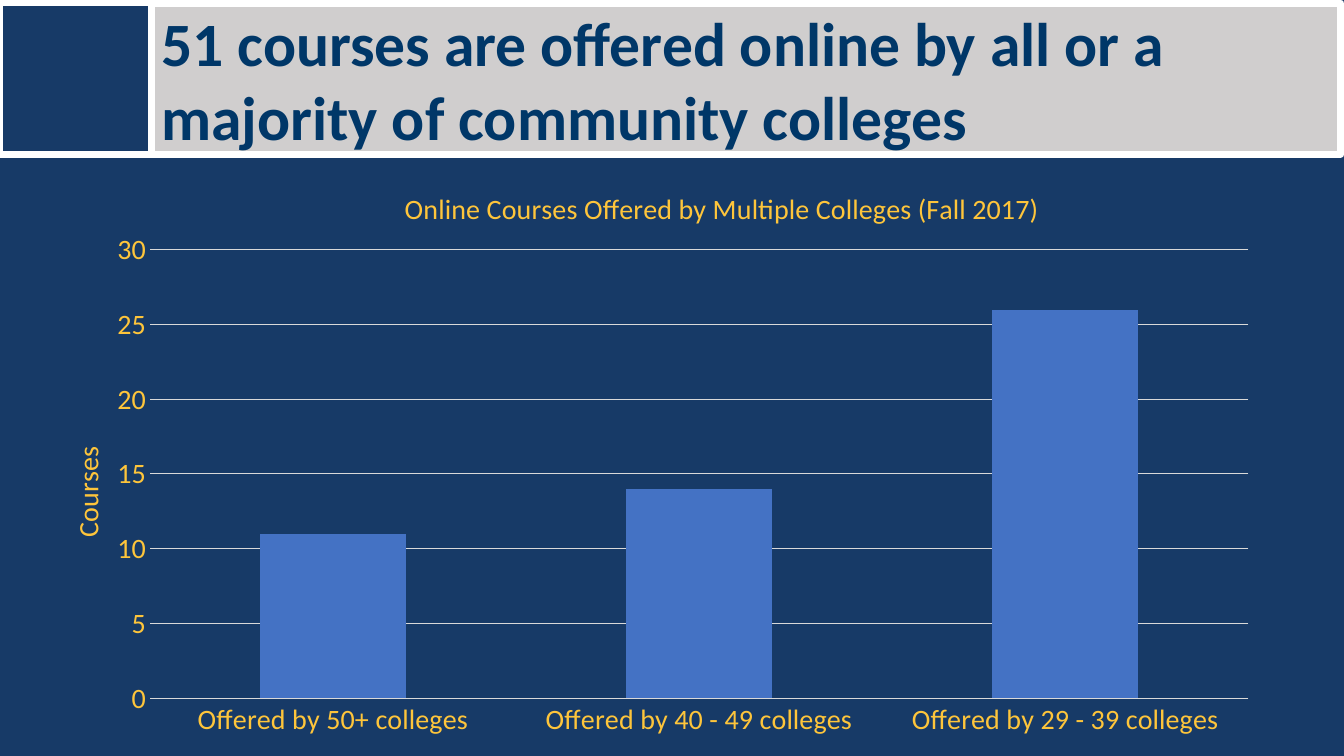
import pptx
import pptx.chart.data
import pptx.dml.color
import pptx.enum.chart
import pptx.enum.shapes
import pptx.enum.text
import pptx.oxml
import pptx.oxml.ns
import pptx.util
from pptx.util import Inches

RGBColor = pptx.dml.color.RGBColor
NAVY = RGBColor(0x17, 0x3A, 0x67)
TITLE_BLUE = RGBColor(0x00, 0x37, 0x68)
TITLE_GREY = RGBColor(0xD0, 0xCE, 0xCE)
WHITE = RGBColor(0xFF, 0xFF, 0xFF)
GOLD = RGBColor(0xFE, 0xC5, 0x3B)
GRID_GREY = RGBColor(0xD9, 0xD9, 0xD9)
BAR_BLUE = RGBColor(0x44, 0x72, 0xC4)
FONT = "Calibri"
HEADER_TOP = Inches(0.03)
HEADER_HEIGHT = Inches(1.5)

COURSES_BY_REACH = {
    "Offered by 50+ colleges": 11,
    "Offered by 40 - 49 colleges": 14,
    "Offered by 29 - 39 colleges": 26,
}


def style_font(font, size, color, bold=False):
    font.name = FONT
    font.size = pptx.util.Pt(size)
    font.bold = bold
    font.color.rgb = color


def style_line(line, color, width):
    line.color.rgb = color
    line.width = pptx.util.Pt(width)


def add_heading(slide, text):
    heading = slide.shapes.title
    heading.left, heading.top = Inches(1.5), HEADER_TOP
    heading.width, heading.height = Inches(11.8), HEADER_HEIGHT
    heading.fill.solid()
    heading.fill.fore_color.rgb = TITLE_GREY
    style_line(heading.line, WHITE, 5)
    frame = heading.text_frame
    frame.word_wrap = True
    frame.auto_size = pptx.enum.text.MSO_AUTO_SIZE.NONE
    frame.vertical_anchor = pptx.enum.text.MSO_ANCHOR.MIDDLE
    paragraph = frame.paragraphs[0]
    paragraph.alignment = pptx.enum.text.PP_ALIGN.LEFT
    run = paragraph.add_run()
    run.text = text
    style_font(run.font, 44, TITLE_BLUE, bold=True)


def add_corner_square(slide):
    square = slide.shapes.add_shape(
        pptx.enum.shapes.MSO_SHAPE.RECTANGLE,
        Inches(0), HEADER_TOP, Inches(1.5), HEADER_HEIGHT)
    square.shadow.inherit = False
    square.fill.background()
    style_line(square.line, WHITE, 5)


def place(element, **fractions):
    """Fix a chart part at fractions of the chart's width and height."""
    qn = pptx.oxml.ns.qn
    for automatic in element.findall(qn("c:layout")):
        element.remove(automatic)
    target = '<c:layoutTarget val="inner"/>' if "w" in fractions else ""
    modes = '<c:xMode val="edge"/><c:yMode val="edge"/>'
    sizes = "".join(f'<c:{key} val="{value}"/>' for key, value in fractions.items())
    layout = pptx.oxml.parse_xml(
        f'<c:layout {pptx.oxml.ns.nsdecls("c")}><c:manualLayout>'
        f"{target}{modes}{sizes}</c:manualLayout></c:layout>")
    text = element.find(qn("c:tx"))
    if text is None:
        element.insert(0, layout)
    else:
        text.addnext(layout)


def set_chart_label(label, text, x, y):
    run = label.text_frame.paragraphs[0].add_run()
    run.text = text
    style_font(run.font, 20, GOLD)
    place(label.element, x=x, y=y)


def style_axis(axis):
    axis.major_tick_mark = pptx.enum.chart.XL_TICK_MARK.NONE
    axis.minor_tick_mark = pptx.enum.chart.XL_TICK_MARK.NONE
    style_font(axis.tick_labels.font, 20, GOLD)


def add_courses_chart(slide):
    data = pptx.chart.data.CategoryChartData()
    data.categories = list(COURSES_BY_REACH)
    data.add_series("Series 1", list(COURSES_BY_REACH.values()))
    chart = slide.shapes.add_chart(
        pptx.enum.chart.XL_CHART_TYPE.COLUMN_STACKED,
        Inches(0.25), Inches(1.53), Inches(12.38), Inches(5.93), data).chart
    style_font(chart.font, 10, RGBColor(0, 0, 0))
    chart.has_legend = False
    chart.has_title = True
    set_chart_label(chart.chart_title,
                    "Online Courses Offered by Multiple Colleges (Fall 2017)", 0.3, 0.05)

    plot = chart.plots[0]
    plot.gap_width = 150
    plot.overlap = 100
    plot.vary_by_categories = False
    bars = plot.series[0].format
    bars.fill.solid()
    bars.fill.fore_color.rgb = BAR_BLUE

    reach_axis = chart.category_axis
    style_axis(reach_axis)
    style_line(reach_axis.format.line, GRID_GREY, 0.75)

    count_axis = chart.value_axis
    style_axis(count_axis)
    count_axis.minimum_scale, count_axis.maximum_scale = 0, 30
    count_axis.major_unit = 5
    count_axis.format.line.fill.background()
    count_axis.has_major_gridlines = True
    style_line(count_axis.major_gridlines.format.line, GRID_GREY, 0.75)
    count_axis.has_title = True
    set_chart_label(count_axis.axis_title, "Courses", 0.03, 0.48)
    body = count_axis.axis_title.element.find(".//" + pptx.oxml.ns.qn("a:bodyPr"))
    body.set("rot", "-5400000")
    body.set("vert", "horz")

    plot_area = chart.element.find(".//" + pptx.oxml.ns.qn("c:plotArea"))
    place(plot_area, x=0.1, y=0.16, w=0.88, h=0.75)


def main():
    presentation = pptx.Presentation()
    presentation.slide_width = Inches(13.33)
    presentation.slide_height = Inches(7.5)
    slide = presentation.slides.add_slide(presentation.slide_layouts[5])
    slide.background.fill.solid()
    slide.background.fill.fore_color.rgb = NAVY
    add_heading(slide, "51 courses are offered online by all or a majority of community colleges")
    add_corner_square(slide)
    add_courses_chart(slide)
    presentation.save("out.pptx")


if __name__ == "__main__":
    main()
